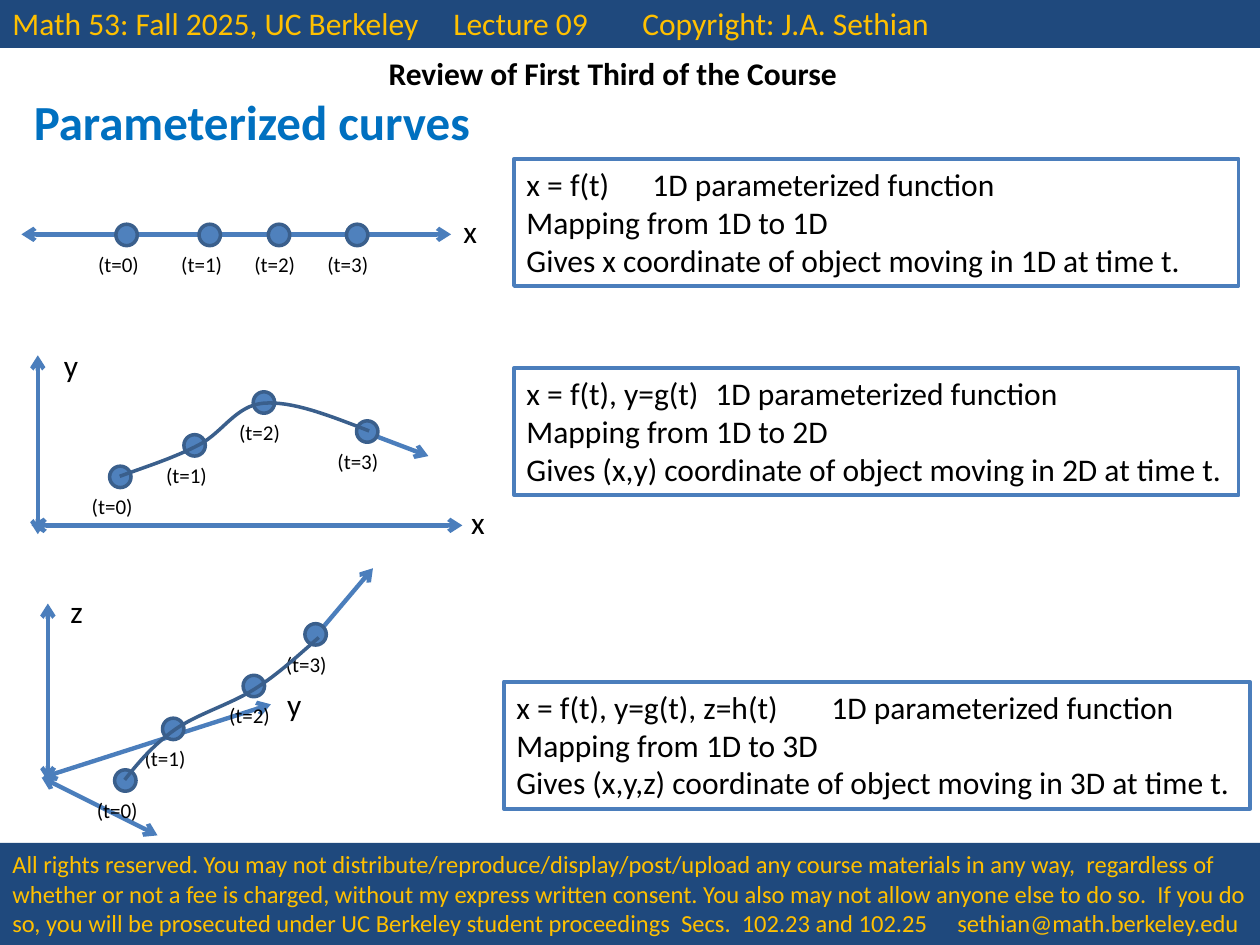
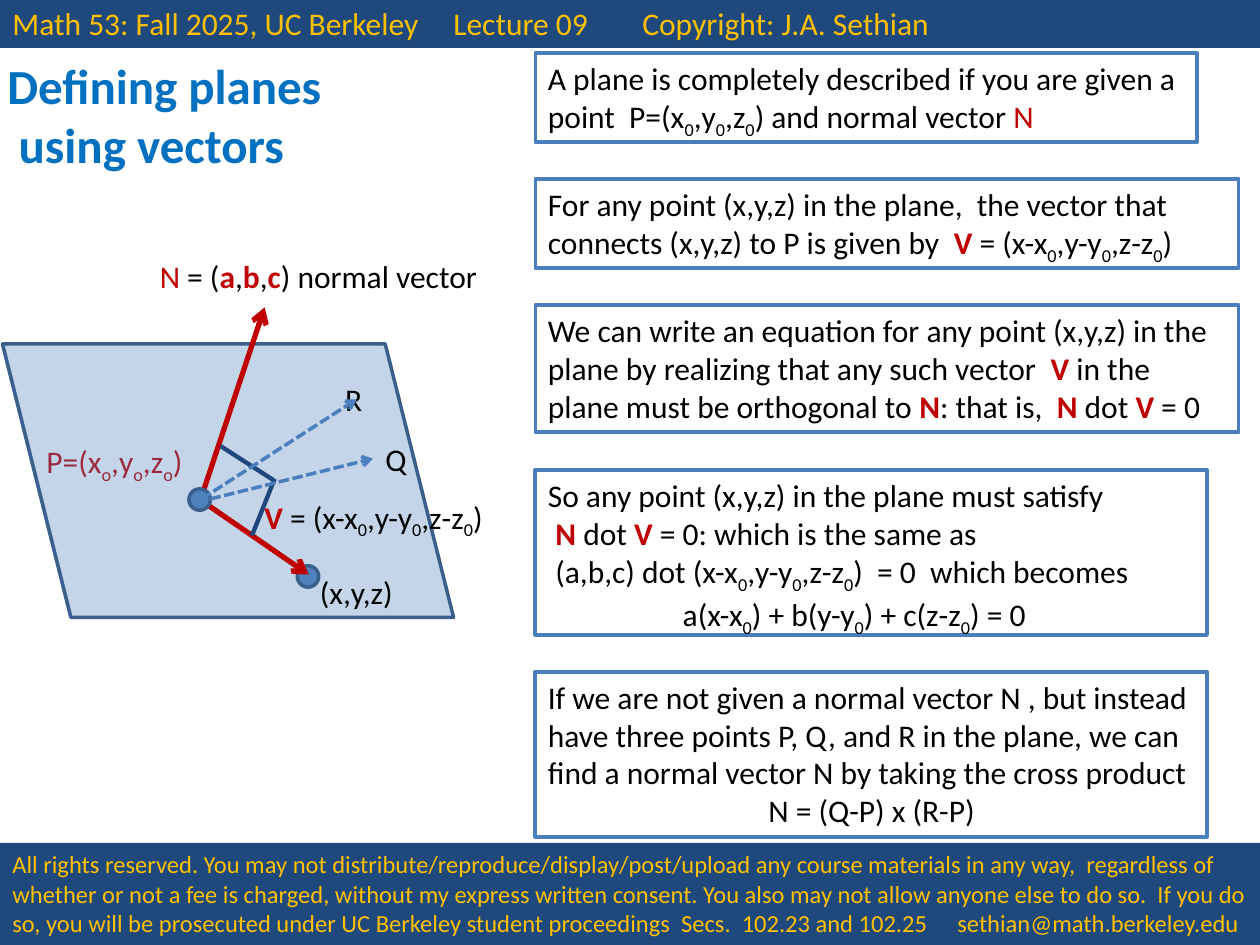
"""Build two lecture slides on parameterized curves and planes."""
from dataclasses import dataclass
from itertools import groupby, zip_longest

from lxml import etree
from pptx import Presentation
from pptx.dml.color import RGBColor
from pptx.enum import dml, shapes, text
from pptx.oxml import ns
from pptx.util import Inches, Pt

FONT = "Calibri"
NAVY = RGBColor(0x1F, 0x49, 0x7D)
GOLD = RGBColor(0xFF, 0xC0, 0x00)
BLACK = RGBColor(0x00, 0x00, 0x00)
TITLE_BLUE = RGBColor(0x00, 0x70, 0xC0)
LINE_BLUE = RGBColor(0x4B, 0x7E, 0xBC)
DOT_BLUE = RGBColor(0x4F, 0x81, 0xBD)
EDGE_BLUE = RGBColor(0x3A, 0x5F, 0x8C)
RED = RGBColor(0xC0, 0x00, 0x00)

BOLD_RED, PLAIN_RED, SUBSCRIPT = "*", "~", "_"
MARKS = BOLD_RED + PLAIN_RED + SUBSCRIPT
DOT = 0.17
TIME_LABEL_DX = (-0.24, -0.24, -0.21, -0.25)

HEADER = "Math 53: Fall 2025, UC Berkeley\tLecture 09\tCopyright: J.A. Sethian"
FOOTER = (
    "All rights reserved. You may not distribute/reproduce/display/post/upload any "
    "course materials in any way,  regardless of whether or not a fee is charged, "
    "without my express written consent. You also may not allow anyone else to do so.  "
    "If you do so, you will be prosecuted under UC Berkeley student proceedings  Secs.  "
    "102.23 and 102.25\tsethian@math.berkeley.edu"
)

Point = tuple[float, float]


@dataclass
class Note:
    """A framed explanation; tabs and indents are in inches."""
    left: float
    top: float
    width: float
    height: float
    words: str
    tabs: tuple[float, ...] = ()
    indents: tuple[float, ...] = ()


@dataclass
class Arrow:
    """A straight line with optional arrowheads."""
    start: Point
    end: Point
    color: RGBColor = LINE_BLUE
    weight: float = 2.5
    head: bool = False
    tail: bool = True
    dashed: bool = False


@dataclass
class Label:
    """A short unframed text."""
    left: float
    top: float
    width: float
    words: str
    color: RGBColor = BLACK


@dataclass
class Motion:
    """Axes, timed positions and the path of a moving object."""
    arrows: tuple[Arrow, ...]
    axis_labels: tuple[Label, ...]
    dots: tuple[Point, ...]
    note: Note
    curve: tuple[Point, ...] = ()


def axis(start: Point, end: Point) -> Arrow:
    """Return a double-headed axis."""
    return Arrow(start, end, head=True)


MOTIONS = (
    Motion(
        (axis((0.17, 1.86), (3.58, 1.86)),),
        (Label(3.58, 1.63, 0.33, "x"),),
        ((0.92, 1.78), (1.58, 1.78), (2.13, 1.78), (2.75, 1.78)),
        Note(4.08, 1.26, 5.75, 1.01,
             "x = f(t)\t1D parameterized function\nMapping from 1D to 1D\n"
             "Gives x coordinate of object moving in 1D at time t.", (0.77,)),
    ),
    Motion(
        (axis((0.25, 4.17), (3.67, 4.17)), axis((0.3, 4.24), (0.3, 2.82)),
         Arrow((2.9, 3.43), (3.4, 3.62))),
        (Label(3.64, 3.94, 0.33, "x"), Label(0.41, 2.7, 0.33, "y")),
        ((0.87, 3.7), (1.46, 3.45), (2.01, 3.11), (2.83, 3.34)),
        Note(4.08, 2.92, 5.75, 1.01,
             "x = f(t), y=g(t)\t1D parameterized function\nMapping from 1D to 2D\n"
             "Gives (x,y) coordinate of object moving in 2D at time t.", (1.54,)),
        ((0.95, 3.78), (1.17, 3.7), (1.39, 3.63), (1.58, 3.53), (1.77, 3.43),
         (1.87, 3.22), (2.09, 3.2), (2.32, 3.18), (2.62, 3.3), (2.93, 3.42)),
    ),
    Motion(
        (axis((0.33, 6.17), (1.25, 6.63)), axis((0.34, 6.17), (2.15, 5.59)),
         axis((0.38, 6.2), (0.38, 4.79)), Arrow((2.52, 5.03), (2.96, 4.51))),
        (Label(2.18, 5.39, 0.33, "y"), Label(0.46, 4.65, 0.33, "z")),
        ((0.91, 6.11), (1.29, 5.7), (1.93, 5.36), (2.42, 4.95)),
        Note(4, 5.41, 5.92, 1.01,
             "x = f(t), y=g(t), z=h(t)\t1D parameterized function\nMapping from 1D to 3D\n"
             "Gives (x,y,z) coordinate of object moving in 3D at time t.", (2.25,)),
        ((0.99, 6.19), (1.1, 6.05), (1.22, 5.91), (1.39, 5.79), (1.56, 5.67),
         (1.83, 5.59), (2.02, 5.47), (2.21, 5.35), (2.37, 5.2), (2.53, 5.06)),
    ),
)

DIFFERENCE = "(x-x_0_,y-y_0_,z-z_0_)"
PLANE_NOTES = (
    Note(4.25, 0.42, 5.25, 0.71,
         "A plane is completely described if you are given a point  "
         "P=(x_0_,y_0_,z_0_) and normal vector ~N~"),
    Note(4.25, 1.42, 5.58, 0.71,
         "For any point (x,y,z) in the plane,  the vector that connects (x,y,z) "
         f"to P is given by  *V* = {DIFFERENCE}"),
    Note(4.25, 2.42, 5.58, 1.01,
         "We can write an equation for any point (x,y,z) in the plane by realizing "
         "that any such vector  *V* in the plane must be orthogonal to *N*: "
         "that is,  *N *dot *V* = 0"),
    Note(4.25, 3.73, 5.33, 1.31,
         "So any point (x,y,z) in the plane must satisfy\n"
         "*N *dot *V* = 0: which is the same as\n"
         f"(a,b,c) dot {DIFFERENCE}  = 0  which becomes\n"
         "a(x-x_0_) + b(y-y_0_) + c(z-z_0_) = 0", indents=(0, 0.06, 0.06, 1.07)),
    Note(4.25, 5.33, 5.33, 1.31,
         "If we are not given a normal vector N , but instead have three points "
         "P, Q, and R in the plane, we can find a normal vector N by taking the "
         "cross product\nN = (Q-P) x (R-P)", indents=(0, 1.75)),
)


def write(sp, words: str, size: float = 18, color: RGBColor = BLACK, bold: bool = False,
          align=text.PP_ALIGN.LEFT, tabs: tuple[float, ...] = (),
          indents: tuple[float, ...] = ()) -> None:
    """Fill a shape with marked-up paragraphs in one base format."""
    tf = sp.text_frame
    tf.word_wrap = True
    tf.vertical_anchor = text.MSO_ANCHOR.TOP
    for i, (line, indent) in enumerate(zip_longest(words.split("\n"), indents, fillvalue=0)):
        p = tf.add_paragraph() if i else tf.paragraphs[0]
        p.alignment = align
        props = p._p.get_or_add_pPr()
        props.set("marL", str(Inches(indent)))
        props.set("indent", "0")
        if tabs:
            stops = etree.SubElement(props, ns.qn("a:tabLst"))
            for tab in tabs:
                etree.SubElement(stops, ns.qn("a:tab"), pos=str(Inches(tab)), algn="l")
        active: set[str] = set()
        for is_mark, chars in groupby(line, lambda c: c in MARKS):
            if is_mark:
                active ^= set(chars)
                continue
            r = p.add_run()
            r.text = "".join(chars)
            r.font.name, r.font.size = FONT, Pt(size)
            r.font.bold = bold or BOLD_RED in active
            r.font.color.rgb = RED if active & {BOLD_RED, PLAIN_RED} else color
            if SUBSCRIPT in active:
                r.font._element.set("baseline", "-25000")


def add_text(slide, left: float, top: float, width: float, height: float, words: str, **fmt):
    """Add an unframed text."""
    sp = slide.shapes.add_textbox(Inches(left), Inches(top), Inches(width), Inches(height))
    write(sp, words, **fmt)


def paint(sp, fill: RGBColor | None, line: RGBColor | None, weight: float = 2) -> None:
    """Set the fill and outline of a shape and drop its shadow."""
    sp.shadow.inherit = False
    if fill is None:
        sp.fill.background()
    else:
        sp.fill.solid()
        sp.fill.fore_color.rgb = fill
    if line is None:
        sp.line.fill.background()
    else:
        sp.line.color.rgb = line
        sp.line.width = Pt(weight)


def add_preset(slide, kind, left: float, top: float, width: float, height: float,
               fill: RGBColor | None = None, line: RGBColor | None = None,
               weight: float = 2):
    """Add a painted preset shape."""
    sp = slide.shapes.add_shape(kind, Inches(left), Inches(top), Inches(width), Inches(height))
    paint(sp, fill, line, weight)
    return sp


def add_note(slide, note: Note) -> None:
    """Add a framed explanation."""
    sp = add_preset(slide, shapes.MSO_SHAPE.RECTANGLE, note.left, note.top,
                    note.width, note.height, line=LINE_BLUE, weight=2.25)
    write(sp, note.words, tabs=note.tabs, indents=note.indents)


def add_label(slide, label: Label) -> None:
    """Add a one-line label."""
    add_text(slide, label.left, label.top, label.width, 0.4, label.words, color=label.color)


def add_dot(slide, left: float, top: float) -> None:
    """Add a point marker."""
    add_preset(slide, shapes.MSO_SHAPE.OVAL, left, top, DOT, DOT, DOT_BLUE, EDGE_BLUE)


def add_arrow(slide, arrow: Arrow) -> None:
    """Add a connector with its arrowheads."""
    sp = slide.shapes.add_connector(shapes.MSO_CONNECTOR.STRAIGHT,
                                    *map(Inches, arrow.start + arrow.end))
    sp.line.color.rgb = arrow.color
    sp.line.width = Pt(arrow.weight)
    if arrow.dashed:
        sp.line.dash_style = dml.MSO_LINE.SQUARE_DOT
    ln = sp.line._get_or_add_ln()
    for name, shown in (("a:headEnd", arrow.head), ("a:tailEnd", arrow.tail)):
        if shown:
            etree.SubElement(ln, ns.qn(name), type="arrow")
    etree.SubElement(sp._element.spPr, ns.qn("a:effectLst"))


def add_curve(slide, points: tuple[Point, ...], steps: int = 16) -> None:
    """Draw a chain of cubic Bezier segments."""
    track = [points[0]]
    for i in range(0, len(points) - 1, 3):
        for t in (n / steps for n in range(1, steps + 1)):
            weights = ((1 - t) ** 3, 3 * t * (1 - t) ** 2, 3 * t * t * (1 - t), t ** 3)
            track.append(tuple(sum(w * q[k] for w, q in zip(weights, points[i:i + 4]))
                               for k in (0, 1)))
    (x, y), *rest = [(Inches(a), Inches(b)) for a, b in track]
    builder = slide.shapes.build_freeform(x, y)
    builder.add_line_segments(rest, close=False)
    paint(builder.convert_to_shape(), None, EDGE_BLUE)


def add_motion(slide, motion: Motion) -> None:
    """Draw one moving-object diagram with its note."""
    for arrow in motion.arrows:
        add_arrow(slide, arrow)
    for label in motion.axis_labels:
        add_label(slide, label)
    for t, ((left, top), dx) in enumerate(zip(motion.dots, TIME_LABEL_DX)):
        add_dot(slide, left, top)
        add_text(slide, left + dx, top + DOT, 0.7, 0.3, f"(t={t})", size=12)
    if motion.curve:
        add_curve(slide, motion.curve)
    add_note(slide, motion.note)


def new_slide(prs, title: str, left: float, top: float, width: float, height: float,
              indents: tuple[float, ...] = ()):
    """Add a slide with the shared bands and title style."""
    slide = prs.slides.add_slide(prs.slide_layouts[6])
    for y, h, words, size, tabs in ((-0.02, 0.4, HEADER, 18, (4.34, 7.38)),
                                    (6.69, 0.81, FOOTER, 14, (7.44,))):
        sp = add_preset(slide, shapes.MSO_SHAPE.RECTANGLE, 0, y, 10, h, NAVY)
        write(sp, words, size=size, color=GOLD, tabs=tabs)
    add_text(slide, left, top, width, height, title, size=28, color=TITLE_BLUE,
             bold=True, indents=indents)
    return slide


def curves_slide(prs) -> None:
    """Build the slide on parameterized curves."""
    slide = new_slide(prs, "Parameterized curves", 0.17, 0.68, 5, 0.57)
    add_text(slide, 1.5, 0.38, 6.73, 0.4, "Review of First Third of the Course",
             bold=True, align=text.PP_ALIGN.CENTER)
    for motion in MOTIONS:
        add_motion(slide, motion)


def planes_slide(prs) -> None:
    """Build the slide on planes and normal vectors."""
    slide = new_slide(prs, "Defining planes\nusing vectors", -0.04, 0.39, 5.42, 1.04, (0, 0.09))
    add_label(slide, Label(0.27, 3.46, 1.62, "P=(x_o_,y_o_,z_o_)", RED))
    plane = add_preset(slide, shapes.MSO_SHAPE.PARALLELOGRAM, 0.02, 2.73, 3.58, 2.17,
                       DOT_BLUE, EDGE_BLUE)
    plane._element.spPr.xfrm.set("flipH", "1")
    tint = plane._element.spPr.find(ns.qn("a:solidFill"))[0]
    etree.SubElement(tint, ns.qn("a:alpha"), val="33000")
    add_arrow(slide, Arrow((1.61, 3.91), (2.1, 2.44), RED, 3))
    add_dot(slide, 2.36, 4.49)
    add_arrow(slide, Arrow((1.55, 3.94), (2.45, 4.56), RED, 3))
    add_dot(slide, 1.5, 3.88)
    for start, end in (((1.75, 3.54), (2.17, 3.81)), ((2.18, 3.8), (2, 4.25))):
        add_arrow(slide, Arrow(start, end, NAVY, tail=False))
    for label in (Label(1.17, 1.99, 3.04, "~N ~= (*a*,*b*,*c*) normal vector"),
                  Label(2.44, 4.5, 1.08, "(x,y,z)"),
                  Label(2, 3.9, 2.33, f"*V* = {DIFFERENCE}"),
                  Label(2.96, 3.44, 0.72, "Q"), Label(2.64, 2.97, 0.72, "R")):
        add_label(slide, label)
    for start, end in (((1.67, 3.96), (2.96, 3.64)), ((1.6, 3.96), (2.83, 3.17))):
        add_arrow(slide, Arrow(start, end, weight=2, dashed=True))
    for note in PLANE_NOTES:
        add_note(slide, note)


def main() -> None:
    """Build and save the presentation."""
    prs = Presentation()
    prs.slide_width, prs.slide_height = Inches(10), Inches(7.5)
    curves_slide(prs)
    planes_slide(prs)
    prs.save("out.pptx")


if __name__ == "__main__":
    main()
